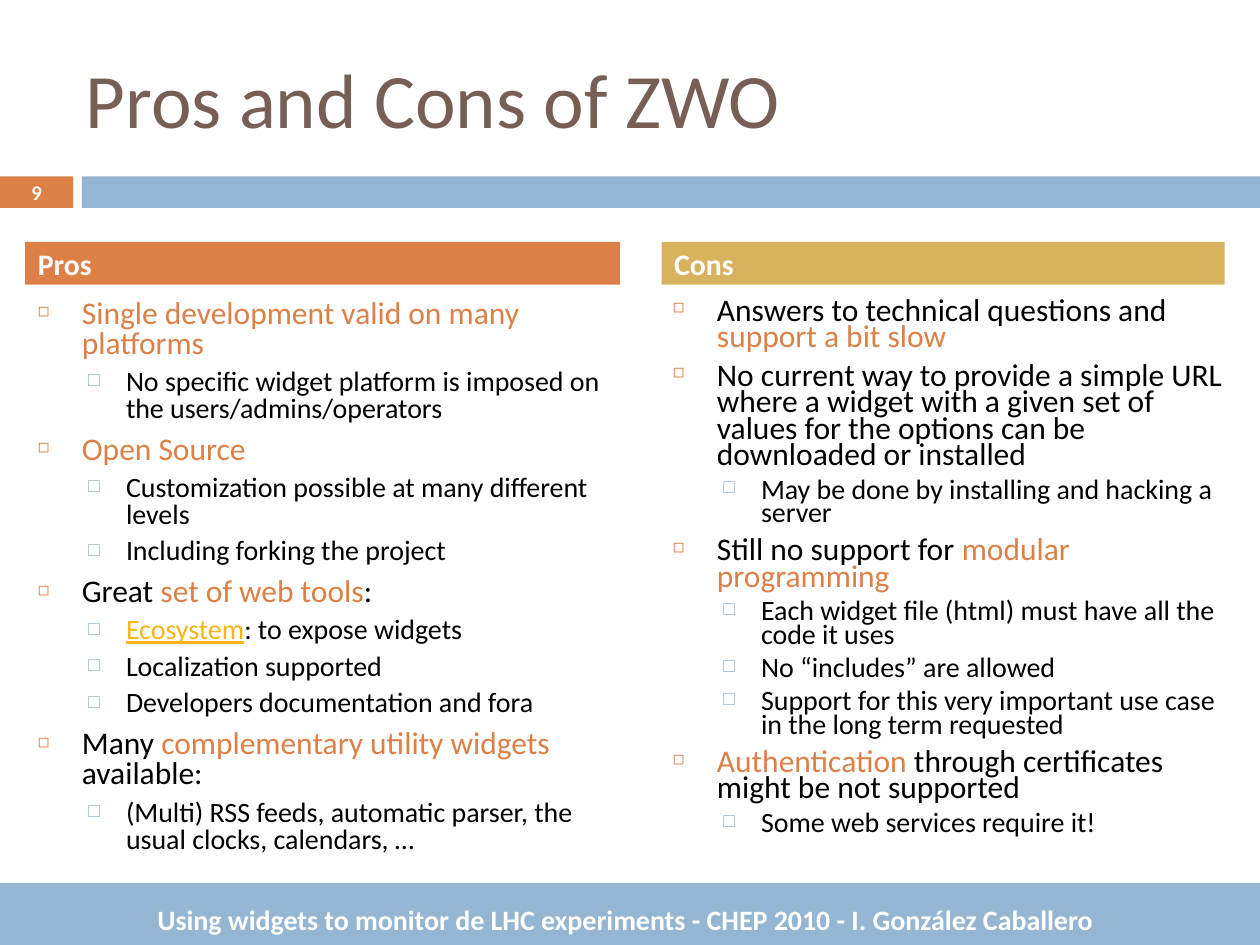
import pptx
import pptx.util
import pptx.dml.color
import pptx.enum.shapes
import pptx.enum.text
import pptx.oxml
import pptx.oxml.ns

Inches = pptx.util.Inches
Pt = pptx.util.Pt
ALIGN = pptx.enum.text.PP_ALIGN
ANCHOR = pptx.enum.text.MSO_ANCHOR

ORANGE, BLUE, GOLD = "DD8047", "94B6D2", "D8B25C"
BROWN, BLACK, WHITE = "775F55", "000000", "FFFFFF"

HOT = {"color": ORANGE}
LINK = {"color": "F7B615", "underline": True}

LEVELS = [
    {"size": 18, "before": 7, "left": 0.35, "hang": 0.35,
     "char": "◻", "color": ORANGE, "scale": 60},
    {"size": 16, "before": 5.5, "left": 0.7, "hang": 0.3,
     "char": "□", "color": BLUE, "scale": 70},
]

# Each item is a level and its runs; a styled run is a (text, format) pair.
PROS = [
    (0, ("Single development valid on many platforms", HOT)),
    (1, "No specific widget platform is imposed on the users/admins/operators"),
    (0, ("Open Source", HOT)),
    (1, "Customization possible at many different levels"),
    (1, "Including forking the project"),
    (0, "Great ", ("set of web tools", HOT), ":"),
    (1, ("Ecosystem", LINK), ": to expose widgets"),
    (1, "Localization supported"),
    (1, "Developers documentation and fora"),
    (0, "Many ", ("complementary utility widgets ", HOT), "available:"),
    (1, "(Multi) RSS feeds, automatic parser, the usual clocks, calendars, …"),
]
CONS = [
    (0, "Answers to technical questions and ", ("support a bit slow", HOT)),
    (0, "No current way to provide a simple URL where a widget with a given "
        "set of values for the options can be downloaded or installed"),
    (1, "May be done by installing and hacking a server"),
    (0, "Still no support for ", ("modular programming", HOT)),
    (1, "Each widget file (html) must have all the code it uses"),
    (1, "No “includes” are allowed"),
    (1, "Support for this very important use case in the long term requested"),
    (0, ("Authentication", HOT), " through certificates might be not supported"),
    (1, "Some web services require it!"),
]


def rgb(code):
    return pptx.dml.color.RGBColor.from_string(code)


def style(font, **values):
    """Apply format values to a font, with size in points and color in hex."""
    for name, value in {"name": "Calibri", **values}.items():
        if name == "color":
            font.color.rgb = rgb(value)
        else:
            setattr(font, name, Pt(value) if name == "size" else value)


def place(shape, left, top, width, height):
    box = {"left": left, "top": top, "width": width, "height": height}
    for name, value in box.items():
        setattr(shape, name, Inches(value))


def paint(shape, color):
    shape.fill.solid()
    shape.fill.fore_color.rgb = rgb(color)


def add_bar(slide, color, *box):
    bar = slide.shapes.add_shape(
        pptx.enum.shapes.MSO_SHAPE.RECTANGLE, *map(Inches, box))
    paint(bar, color)
    bar.line.fill.background()
    bar.shadow.inherit = False


def set_frame(shape, anchor):
    frame = shape.text_frame
    values = {"word_wrap": True, "vertical_anchor": anchor,
              "auto_size": pptx.enum.text.MSO_AUTO_SIZE.NONE}
    for name, value in values.items():
        setattr(frame, name, value)
    return frame


def set_line(shape, text, align=ALIGN.LEFT, **values):
    """Write one line of text, centred on the height of the shape."""
    para = set_frame(shape, ANCHOR.MIDDLE).paragraphs[0]
    para.alignment = align
    para.space_before = Pt(0)
    run = para.add_run()
    run.text = text
    style(run.font, **values)


def add_label(slide, text, size, *box):
    label = slide.shapes.add_textbox(*map(Inches, box))
    set_line(label, text, ALIGN.CENTER, size=size, bold=True, color=WHITE)


def set_bullet(para, level):
    props = para._p.get_or_add_pPr()
    props.set("marL", str(Inches(level["left"])))
    props.set("indent", str(-Inches(level["hang"])))
    space = pptx.oxml.ns.nsdecls("a")
    for xml in (
        f'<a:buClr {space}><a:srgbClr val="{level["color"]}"/></a:buClr>',
        f'<a:buSzPct {space} val="{level["scale"] * 1000}"/>',
        f'<a:buChar {space} char="{level["char"]}"/>',
    ):
        props.append(pptx.oxml.parse_xml(xml))


def fill_list(shape, items, spacing):
    frame = set_frame(shape, ANCHOR.TOP)
    for index, (depth, *runs) in enumerate(items):
        para = frame.add_paragraph() if index else frame.paragraphs[0]
        level = LEVELS[depth]
        set_bullet(para, level)
        para.level = depth
        para.line_spacing = spacing
        para.space_before = Pt(level["before"] if index else 0)
        for part in runs:
            text, look = (part, {}) if isinstance(part, str) else part
            run = para.add_run()
            run.text = text
            style(run.font, **{"size": level["size"], "color": BLACK, **look})


def main():
    deck = pptx.Presentation()
    deck.slide_width, deck.slide_height = Inches(10), Inches(7.5)
    slide = deck.slides.add_slide(deck.slide_layouts[4])
    title, head_a, list_a, head_b, list_b = slide.placeholders

    add_bar(slide, ORANGE, 0, 1.4, 0.58, 0.25)
    add_bar(slide, BLUE, 0.65, 1.4, 9.35, 0.25)
    add_bar(slide, BLUE, 0, 7.01, 10, 0.49)

    place(title, 0.58, 0.3, 8.92, 0.95)
    set_line(title, "Pros and Cons of ZWO", size=44, color=BROWN)

    for head, text, color, left, width in (
        (head_a, "Pros", ORANGE, 0.2, 4.72),
        (head_b, "Cons", GOLD, 5.25, 4.47),
    ):
        place(head, left, 1.92, width, 0.34)
        paint(head, color)
        set_line(head, text, size=17, bold=True, color=WHITE)

    for body, items, spacing, left, width in (
        (list_a, PROS, 0.8, 0.2, 4.72),
        (list_b, CONS, 0.7, 5.24, 4.57),
    ):
        place(body, left, 2.33, width, 4.65)
        fill_list(body, items, spacing)

    add_label(slide, "9", 11.9, 0, 1.39, 0.58, 0.27)
    add_label(slide, "Using widgets to monitor de LHC experiments - CHEP 2010 - "
              "I. González Caballero", 16, 0.75, 7.1, 8.43, 0.4)
    deck.save("out.pptx")


if __name__ == "__main__":
    main()
